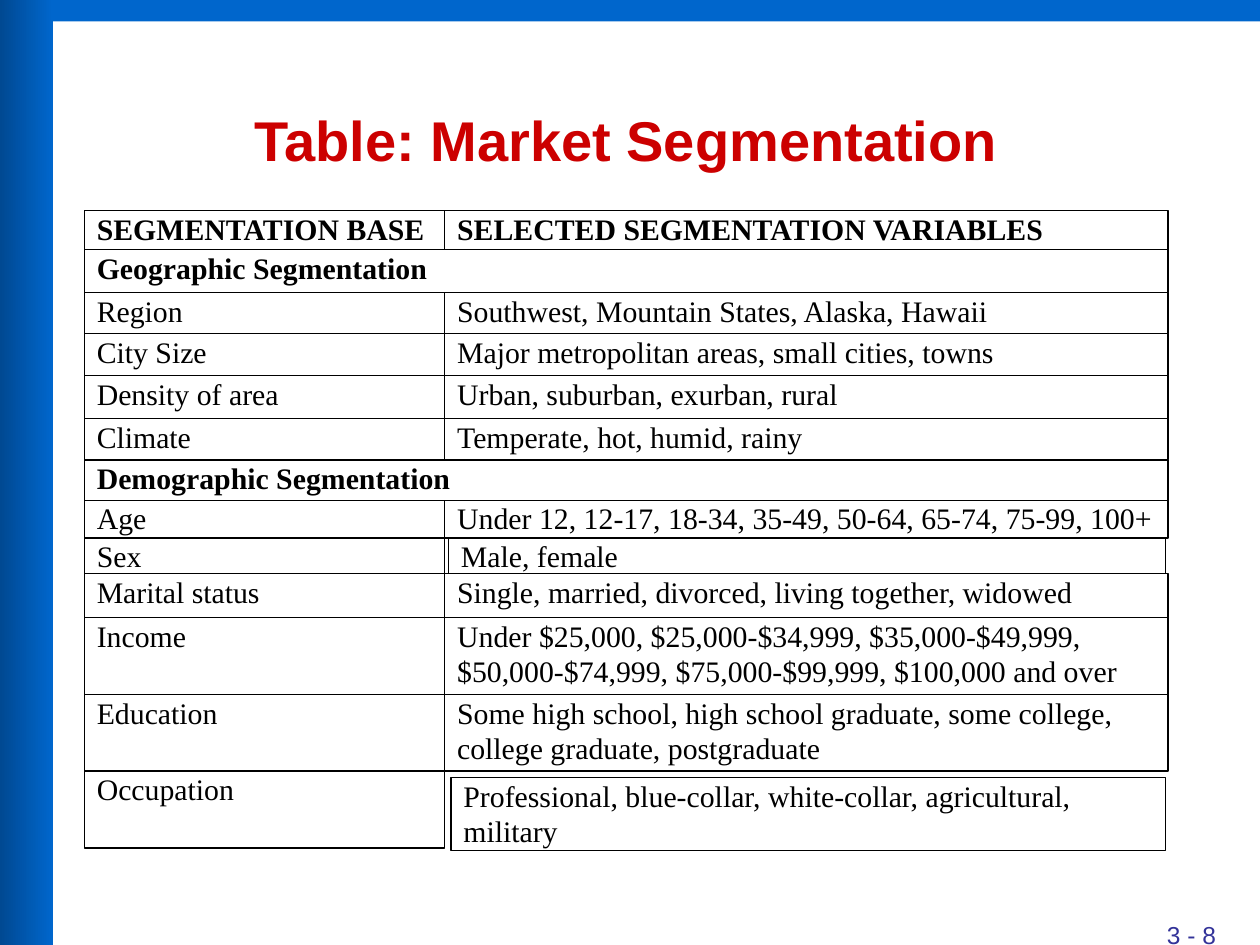
from typing import NamedTuple

from pptx import Presentation
from pptx.dml.color import RGBColor
from pptx.enum.shapes import MSO_SHAPE
from pptx.enum.text import MSO_ANCHOR, PP_ALIGN
from pptx.util import Inches, Pt

RECT = MSO_SHAPE.RECTANGLE
TOP = MSO_ANCHOR.TOP
LEFT, CENTER, RIGHT = PP_ALIGN.LEFT, PP_ALIGN.CENTER, PP_ALIGN.RIGHT

COLORS = {
    "white": "FFFFFF",
    "black": "000000",
    "blue": "0066CC",
    "navy": "004992",
    "red": "CC0000",
    "indigo": "333399",
}
WIDE, HIGH = 10, 7.5
COLS = (0.67, 3.53, 9.27)  # column edges
START = 1.67  # top of the first row


class Box(NamedTuple):
    left: float
    top: float
    width: float
    height: float


class Style(NamedTuple):
    font: str
    size: float
    color: str
    bold: bool = False
    align: PP_ALIGN = LEFT


class Row(NamedTuple):
    """A row without a value spans both columns; inset moves the value cell."""
    height: float
    base: str
    value: str = ""
    bold: bool = False
    inset: tuple[float, float] = (0, 0)
    tall: float = 0  # height of the value cell, if it differs


ROWS = (
    Row(0.31, "SEGMENTATION BASE", "SELECTED SEGMENTATION VARIABLES", bold=True),
    Row(0.34, "Geographic Segmentation", bold=True),
    Row(0.33, "Region", "Southwest, Mountain States, Alaska, Hawaii"),
    Row(0.33, "City Size", "Major metropolitan areas, small cities, towns"),
    Row(0.34, "Density of area", "Urban, suburban, exurban, rural"),
    Row(0.33, "Climate", "Temperate, hot, humid, rainy"),
    Row(0.32, "Demographic Segmentation", bold=True),
    Row(0.30, "Age", "Under 12, 12-17, 18-34, 35-49, 50-64, 65-74, 75-99, 100+"),
    Row(0.28, "Sex", "Male, female", inset=(0.03, 0), tall=0.31),
    Row(0.35, "Marital status", "Single, married, divorced, living together, widowed"),
    Row(0.61, "Income", "Under $25,000, $25,000-$34,999, $35,000-$49,999, "
        "$50,000-$74,999, $75,000-$99,999, $100,000 and over"),
    Row(0.61, "Education", "Some high school, high school graduate, some college, "
        "college graduate, postgraduate"),
    Row(0.61, "Occupation", "Professional, blue-collar, white-collar, agricultural, "
        "military", inset=(0.05, 0.05), tall=0.58),
)


def tint(name: str) -> RGBColor:
    return RGBColor.from_string(COLORS[name])


def add_rect(slide, box: Box, fill: str = "white"):
    shape = slide.shapes.add_shape(RECT, *map(Inches, box))
    shape.shadow.inherit = False
    shape.fill.solid()
    shape.fill.fore_color.rgb = tint(fill)
    shape.line.fill.background()
    return shape


def write(shape, text: str, style: Style) -> None:
    frame = shape.text_frame
    frame.text = text
    frame.word_wrap = True
    frame.vertical_anchor = TOP
    para = frame.paragraphs[0]
    para.alignment = style.align
    font = para.runs[0].font
    font.name, font.size, font.bold = style.font, Pt(style.size), style.bold
    font.color.rgb = tint(style.color)


def add_cell(slide, box: Box, text: str, bold: bool) -> None:
    cell = add_rect(slide, box)
    cell.line.color.rgb = tint("black")
    cell.line.width = Pt(0.75)
    cell.text_frame.margin_top = cell.text_frame.margin_bottom = 0
    write(cell, text, Style("Times New Roman", 17, "black", bold))


def add_rows(slide) -> None:
    first, split, end = COLS
    top = START
    for row in ROWS:
        edge = split if row.value else end
        add_cell(slide, Box(first, top, edge - first, row.height), row.base, row.bold)
        if row.value:
            over, down = row.inset
            right = end - 0.02 if over else end
            left = split + over
            box = Box(left, top + down, right - left, row.tall or row.height)
            add_cell(slide, box, row.value, row.bold)
        top += row.height


def add_frame(slide) -> None:
    """Draw the bars along the top and left edges and the slide number."""
    add_rect(slide, Box(0, 0, WIDE, 0.17), "blue")
    side = add_rect(slide, Box(0, 0, 0.42, HIGH))
    side.fill.gradient()
    side.fill.gradient_angle = 0
    for stop, name in zip(side.fill.gradient_stops, ("navy", "blue")):
        stop.color.rgb = tint(name)
    page = slide.shapes.add_textbox(*map(Inches, Box(7.67, 7.25, 2.08, 0.5)))
    write(page, "3 - 8", Style("Arial", 14, "indigo", align=RIGHT))


def main() -> None:
    deck = Presentation()
    deck.slide_width, deck.slide_height = Inches(WIDE), Inches(HIGH)
    slide = deck.slides.add_slide(deck.slide_layouts[6])
    add_frame(slide)
    title = add_rect(slide, Box(0.69, 0.79, 8.56, 0.63))
    write(title, "Table: Market Segmentation", Style("Arial", 32, "red", True, CENTER))
    add_rows(slide)
    deck.save("out.pptx")


if __name__ == "__main__":
    main()
